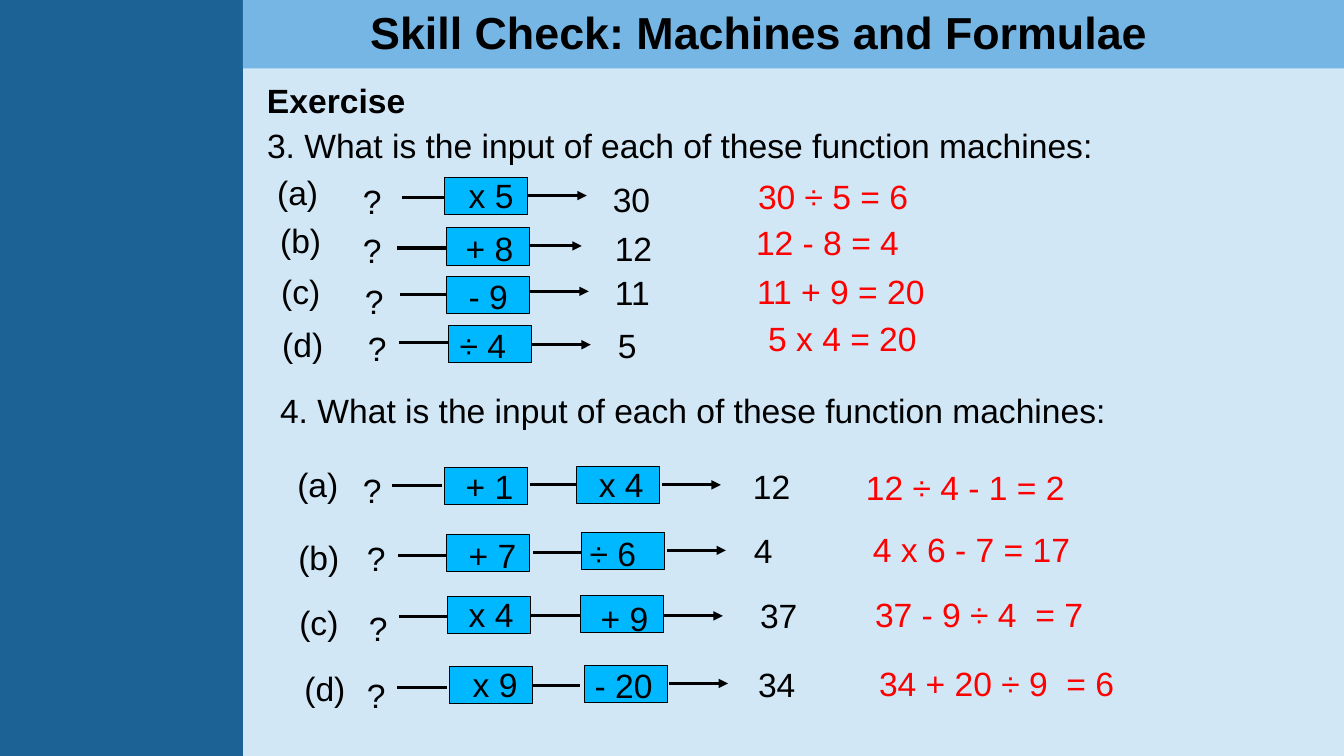
from lxml import etree
from pptx import Presentation
from pptx import util as u
from pptx.dml.color import RGBColor
from pptx.enum import shapes, text
from pptx.oxml.ns import qn

CELL = u.Inches(0.1)  # the slide is a grid of 133.3 columns by 75 rows
BLACK, RED, BOX_BLUE = "000000", "FF0000", "00B8FF"
SIDEBAR, BOX_WIDTH, BOX_HEIGHT = 24.1, 8.2, 3.7
LINE_LENGTH, ARROW_LENGTH = 4.9, 5.8

deck = Presentation()
deck.slide_width, deck.slide_height = u.Inches(13.33), u.Inches(7.5)
page = deck.slides.add_slide(deck.slide_layouts[6])
color = RGBColor.from_string
page.background.fill.solid()
page.background.fill.fore_color.rgb = color("D1E7F6")


def rectangle(left, top, width, height, fill, outlined=False):
    box = page.shapes.add_shape(shapes.MSO_SHAPE.RECTANGLE, *(
        round(cells * CELL) for cells in (left, top, width, height)))
    box.shadow.inherit = False
    box.fill.solid()
    box.fill.fore_color.rgb = color(fill)
    if outlined:
        box.line.color.rgb = color(BLACK)
        box.line.width = u.Pt(0.75)
    else:
        box.line.fill.background()


def write(words, left, top, width, ink=BLACK, size=24, bold=False, height=5):
    box = page.shapes.add_textbox(*(
        round(cells * CELL) for cells in (left, top, width, height)))
    box.text_frame.word_wrap = True
    box.text_frame.auto_size = text.MSO_AUTO_SIZE.SHAPE_TO_FIT_TEXT
    para = box.text_frame.paragraphs[0]
    para.text = words
    para.font.name, para.font.size, para.font.bold = "Arial", u.Pt(size), bold
    para.font.color.rgb = color(ink)
    return para


rectangle(0, 0, SIDEBAR, 75, "1D6294")
rectangle(SIDEBAR, 0, 133.3 - SIDEBAR, 6.8, "75B6E5")
title = write("Skill Check: Machines and Formulae", 26.5, 0, 97.6,
              size=32, bold=True, height=6.4)
title.alignment = text.PP_ALIGN.CENTER
write("Exercise", 25.5, 7.4, 18.6, bold=True)
write("3. What is the input of each of these function machines:", 25.5, 11.9, 95.5)
write("4. What is the input of each of these function machines:", 26.8, 38.2, 87)

# Each machine: label, input, output and answer as (words, left, top);
# stages as (words, left, top, box left, box top);
# lines as (left, top), the last one being the arrow.
machines = [
    (("(a)", 26.5, 16.6), ("?", 35, 17.5), ("30", 59.8, 17.3), ("30 ÷ 5 = 6", 74.2, 17),
     [("x 5", 45.5, 16.9, 44.1, 17.6)], [(39.9, 19.6), (52.4, 19.4)]),
    (("(b)", 26.8, 21.3), ("?", 35, 22.3), ("12", 60, 22.1), ("12 - 8 = 4", 74, 21.5),
     [("+ 8", 45.2, 22.1, 44.3, 22.6)], [(39.4, 24.6), (51.9, 24.4)]),
    (("(c)", 26.9, 26.4), ("?", 35.2, 27.4), ("11", 60, 26.5), ("11 + 9 = 20", 74.1, 26.4),
     [("- 9", 45.5, 26.9, 44.3, 27.4)], [(39.7, 29.2), (52.6, 28.9)]),
    (("(d)", 27, 31.6), ("?", 35.5, 32), ("5", 60.3, 31.7), ("5 x 4 = 20", 75.2, 31),
     [("÷ 4", 44.6, 31.7, 44.5, 32.3)], [(39.6, 34), (52.8, 34.2)]),
    (("(a)", 28.5, 45.5), ("?", 35, 46.1), ("12", 73.7, 45.7), ("12 ÷ 4 - 1 = 2", 84.9, 45.8),
     [("+ 1", 45.2, 45.7, 44.1, 46.4), ("x 4", 58.4, 45.5, 57.2, 46.3)],
     [(38.9, 48.2), (52.6, 48.1), (65.7, 48.1)]),
    (("(b)", 28.6, 52.8), ("?", 35.4, 52.9), ("4", 73.8, 52.1), ("4 x 6 - 7 = 17", 85.6, 52),
     [("+ 7", 45.5, 52.6, 44.3, 53), ("÷ 6", 57.5, 52.4, 57.7, 52.8)],
     [(39.5, 55.1), (52.9, 54.8), (66.2, 54.6)]),
    (("(c)", 28.7, 59.2), ("?", 35.6, 59.8), ("37", 74.4, 58.5), ("37 - 9 ÷ 4  = 7", 85.8, 58.4),
     [("x 4", 45.5, 58.4, 44.4, 59.2), ("+ 9", 58.6, 58.8, 57.6, 59.1)],
     [(39.6, 61.2), (52.6, 61.1), (65.9, 61.1)]),
    (("(d)", 29.2, 65.8), ("?", 35.4, 66.5), ("34", 74.2, 65.4), ("34 + 20 ÷ 9  = 6", 86.2, 65.3),
     [("x 9", 45.9, 65.4, 44.6, 66.1), ("- 20", 58, 65.5, 58, 66)],
     [(39.4, 68.2), (52.6, 68), (66.4, 67.8)]),
]

for label, start, output, answer, stages, lines in machines:
    for number, (left, top) in enumerate(lines, 1):
        is_arrow = number == len(lines)
        right = left + (ARROW_LENGTH if is_arrow else LINE_LENGTH)
        line = page.shapes.add_connector(shapes.MSO_CONNECTOR.STRAIGHT, *(
            round(cells * CELL) for cells in (left, top, right, top)))
        line.line.color.rgb = color(BLACK)
        line.line.width = u.Pt(2.25)
        if is_arrow:
            etree.SubElement(line.line._get_or_add_ln(), qn("a:tailEnd"), type="triangle")
        etree.SubElement(line._element.spPr, qn("a:effectLst"))
    for words, left, top, box_left, box_top in stages:
        rectangle(box_left, box_top, BOX_WIDTH, BOX_HEIGHT, BOX_BLUE, outlined=True)
        write(words, left, top, BOX_WIDTH)
    write(*label, 6.5)
    write(*start, 4)
    write(*output, 6)
    write(*answer, 27.5, RED)

deck.save("out.pptx")
